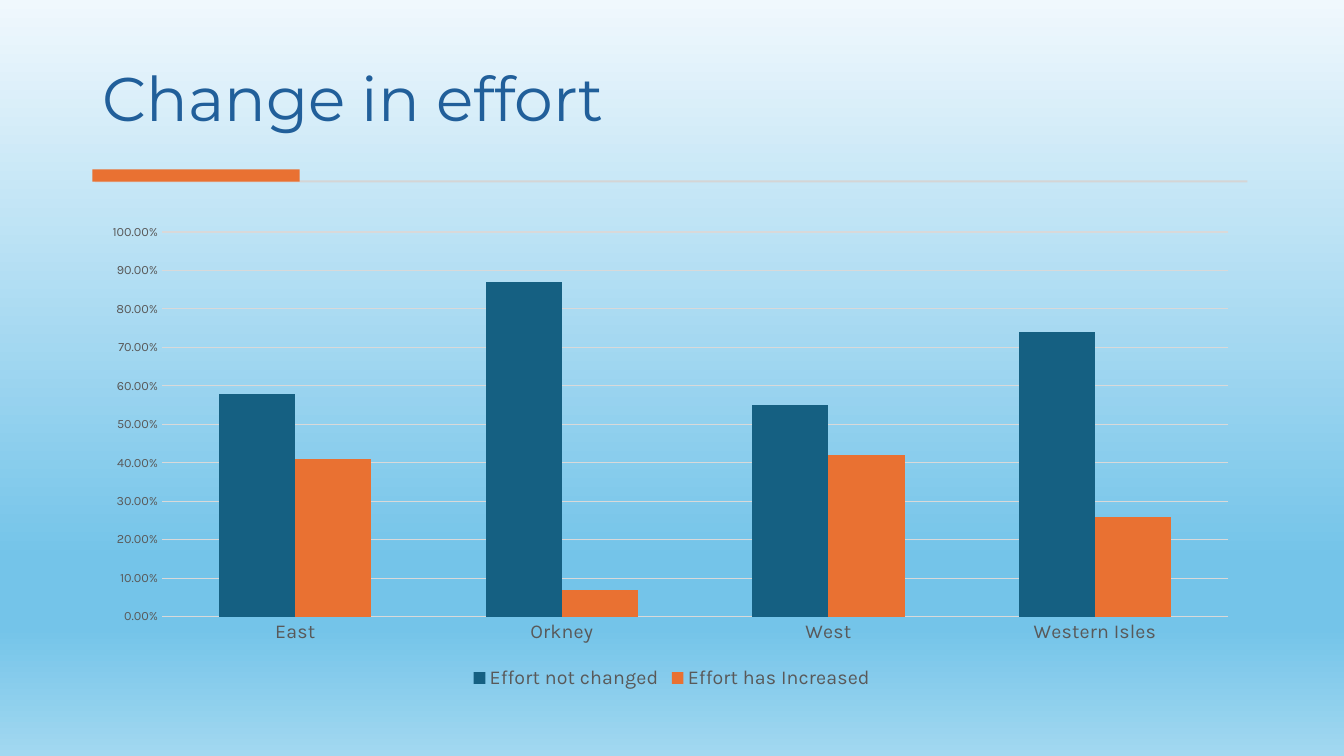
from copy import deepcopy

from lxml import etree
from pptx import Presentation
from pptx import util as u
from pptx.chart.data import CategoryChartData
from pptx.dml.color import RGBColor
from pptx.enum import chart as ch, shapes, text
from pptx.oxml.ns import qn

Pt = u.Pt
TITLE_BLUE = RGBColor(0x21, 0x5F, 0x9A)
TEAL = RGBColor(0x15, 0x60, 0x82)
ORANGE = RGBColor(0xE9, 0x71, 0x32)
RULE_GREY = RGBColor(0xD5, 0xD5, 0xD5)
GRID_GREY = RGBColor(0xD9, 0xD9, 0xD9)
LABEL_GREY = RGBColor(0x59, 0x59, 0x59)
SKY_STOPS = [
    (0, RGBColor(0xF0, 0xF8, 0xFD)),
    (0.74, RGBColor(0x74, 0xC4, 0xE9)),
    (0.83, RGBColor(0x74, 0xC4, 0xE9)),
    (1, RGBColor(0xA2, 0xD8, 0xF0)),
]
REGIONS = ["East", "Orkney", "West", "Western Isles"]
EFFORT = [
    ("Effort not changed", [0.58, 0.87, 0.55, 0.74], TEAL),
    ("Effort has Increased", [0.41, 0.07, 0.42, 0.26], ORANGE),
]
PLOT_BOX = {"x": 0.06, "y": 0.04, "w": 0.92, "h": 0.8}


def paint_sky(slide):
    sky = slide.background.fill
    sky.gradient()
    sky.gradient_angle = 270
    stop_list = next(slide.element.iter(qn("a:gsLst")))
    while len(stop_list) < len(SKY_STOPS):
        stop_list.append(deepcopy(stop_list[0]))
    for stop, (position, color) in zip(sky.gradient_stops, SKY_STOPS):
        stop.position = position
        stop.color.rgb = color


def add_heading(slide, left, top, width, height):
    heading = slide.shapes.add_textbox(Pt(left), Pt(top), Pt(width), Pt(height))
    frame = heading.text_frame
    frame.word_wrap = True
    frame.vertical_anchor = text.MSO_ANCHOR.BOTTOM
    paragraph = frame.paragraphs[0]
    paragraph.text = "Change in effort"
    paragraph.line_spacing = 0.9
    style_font(paragraph.font, 44, TITLE_BLUE, "Montserrat")


def add_divider(slide, left, top, width, height):
    bars = [
        (left + 2, top + height - 1, width - 2, 1.5, RULE_GREY),
        (left, top, 148, height, ORANGE),
    ]
    for x, y, w, h, color in bars:
        bar = slide.shapes.add_shape(
            shapes.MSO_SHAPE.RECTANGLE, Pt(x), Pt(y), Pt(w), Pt(h))
        bar.shadow.inherit = False
        bar.fill.solid()
        bar.fill.fore_color.rgb = color
        bar.line.fill.background()


def style_font(font, size, color, name="Karla"):
    font.name = name
    font.size = Pt(size)
    font.color.rgb = color


def fix_plot_area(chart):
    plot_area = next(chart.element.iter(qn("c:plotArea")))
    for layout in plot_area.findall(qn("c:layout")):
        plot_area.remove(layout)
    layout = etree.Element(qn("c:layout"))
    manual = etree.SubElement(layout, qn("c:manualLayout"))
    settings = [("layoutTarget", "inner"), ("xMode", "edge"), ("yMode", "edge")]
    for tag, value in settings + list(PLOT_BOX.items()):
        etree.SubElement(manual, qn("c:" + tag)).set("val", str(value))
    plot_area.insert(0, layout)


def add_effort_chart(slide, left, top, width, height):
    data = CategoryChartData(number_format="0.00%")
    data.categories = REGIONS
    for name, shares, _ in EFFORT:
        data.add_series(name, shares)
    chart = slide.shapes.add_chart(
        ch.XL_CHART_TYPE.COLUMN_CLUSTERED,
        Pt(left), Pt(top), Pt(width), Pt(height), data).chart
    chart.has_title = False
    style_font(chart.font, 10, LABEL_GREY)

    plot = chart.plots[0]
    plot.gap_width = 150
    plot.overlap = 0
    plot.vary_by_categories = False
    for series, (_, _, color) in zip(plot.series, EFFORT):
        series.format.fill.solid()
        series.format.fill.fore_color.rgb = color

    for axis, size in ((chart.category_axis, 14), (chart.value_axis, 9)):
        axis.major_tick_mark = ch.XL_TICK_MARK.NONE
        axis.minor_tick_mark = ch.XL_TICK_MARK.NONE
        axis.format.line.fill.background()
        style_font(axis.tick_labels.font, size, LABEL_GREY)

    shares_axis = chart.value_axis
    shares_axis.minimum_scale = 0
    shares_axis.maximum_scale = 1
    shares_axis.major_unit = 0.1
    shares_axis.tick_labels.number_format = "0.00%"
    shares_axis.tick_labels.number_format_is_linked = False
    shares_axis.has_major_gridlines = True
    grid = shares_axis.major_gridlines.format.line
    grid.color.rgb = GRID_GREY
    grid.width = Pt(0.75)

    chart.has_legend = True
    chart.legend.position = ch.XL_LEGEND_POSITION.BOTTOM
    chart.legend.include_in_layout = False
    style_font(chart.legend.font, 14, LABEL_GREY)
    fix_plot_area(chart)


def main():
    deck = Presentation()
    deck.slide_width, deck.slide_height = Pt(960), Pt(540)
    slide = deck.slides.add_slide(deck.slide_layouts[6])
    paint_sky(slide)
    add_heading(slide, 66, 20, 828, 80)
    add_divider(slide, 66, 121, 825, 8.8)
    add_effort_chart(slide, 66, 152, 828, 343.5)
    deck.save("out.pptx")


if __name__ == "__main__":
    main()
